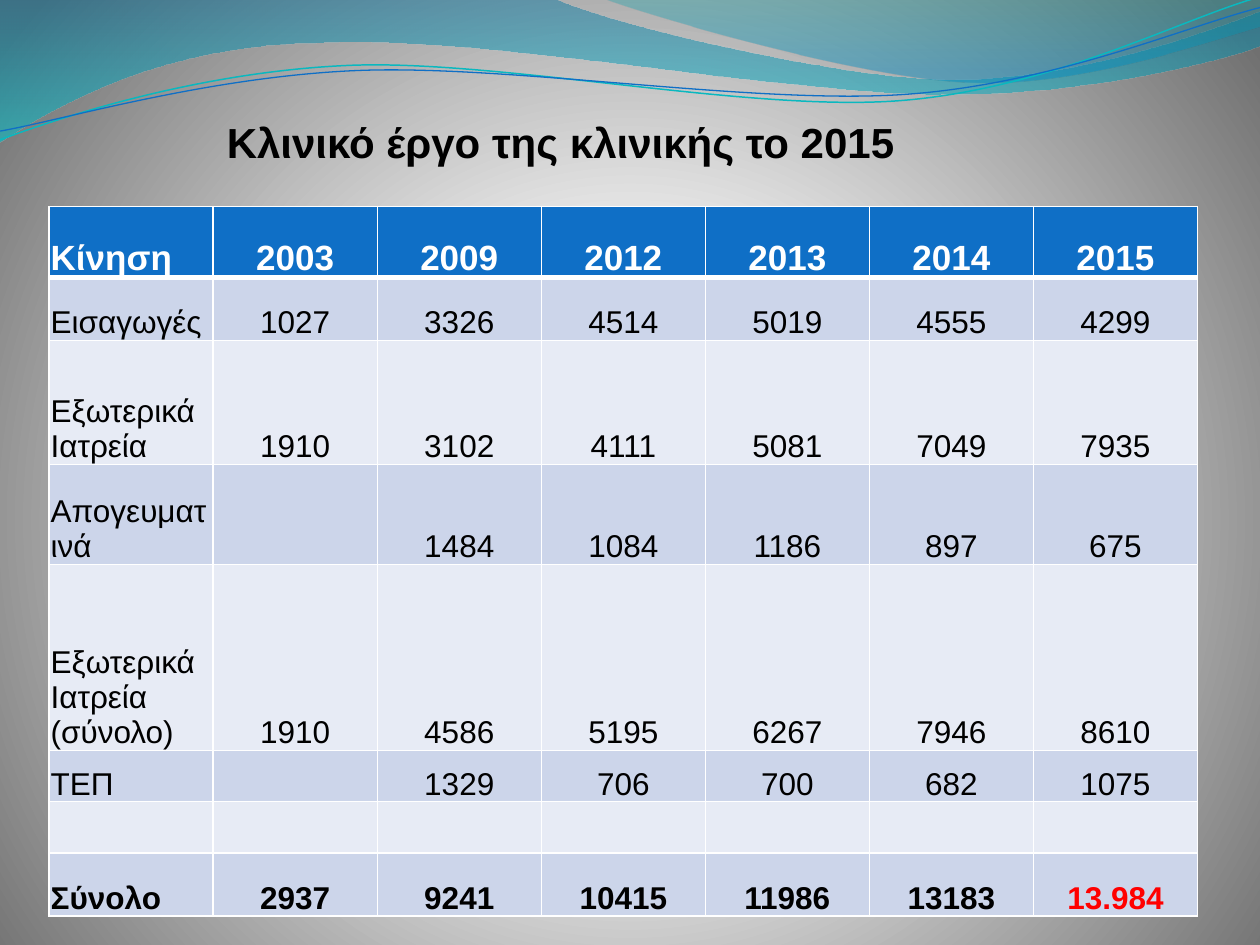
from pptx import Presentation
from pptx.dml.color import RGBColor
from pptx.enum.text import MSO_ANCHOR, MSO_AUTO_SIZE, PP_ALIGN
from pptx.oxml import parse_xml
from pptx.oxml.ns import nsdecls, qn
from pptx.util import Pt

COLORS = {
    "black": "000000", "white": "FFFFFF", "red": "FF0000", "gray": "707070",
    "header": "0F6FC6", "band_dark": "CCD5EA", "band_light": "E7EBF5",
    "ocean": "0074A1", "aqua": "00C6CF", "teal": "00A1A9", "azure": "008BBF",
    "line_teal": "0AB8BF", "line_blue": "0F6FC6",
}
FONT = "Arial"
DOWNWARD = '<a:lin ang="5400000" scaled="0"/>'
RADIAL = ('<a:path path="circle"><a:fillToRect l="10000" t="110000" '
          'r="10000" b="100000"/></a:path>')
BACKDROP_STOPS = [(0, "white", 100), (25, "white", 100), (100, "gray", 100)]

# A pair is a straight step; six numbers are a Bézier step (two controls, end).
BANDS = [
    ([(0, -0.7), (316.8, -0.7), (342.7, 12.2, 478.1, 45.4, 545.8, 45.4),
      (614.2, 45.4, 689.8, 18.7, 720, 6.5), (720.7, 25.9),
      (707.8, 31.7, 626.4, 54.7, 537.1, 54), (447.8, 54, 275, 20.2, 185, 24.5),
      (92.9, 25.2, 33.1, 59.8, -0.7, 81.4)],
     [(0, "ocean", 45), (100, "aqua", 55)]),
    ([(344.9, -0.7), (366.5, 7.9, 491, 44.6, 553.7, 46.8),
      (616.3, 49.7, 691.9, 23, 720, 15.1), (720, 0)],
     [(0, "teal", 30), (80, "azure", 45)]),
]
STRANDS = [
    ([(0, 79.9), (34.6, 67, 113.8, 41, 199.4, 37.4),
      (284.4, 33.8, 427, 64.1, 513.4, 57.6),
      (599.8, 51.1, 675.4, 10.8, 718.6, -1.4)], "line_teal", 0.85),
    ([(0, 74.9), (33.8, 69.1, 118.1, 43.9, 203.8, 40.3),
      (290.2, 36.7, 429.8, 59.8, 516.2, 54),
      (601.9, 48.2, 677.5, 15.1, 720, 4.3)], "line_blue", 0.75),
]

TITLE = "Κλινικό έργο της κλινικής το 2015"
ROWS = [
    ["Κίνηση", "2003", "2009", "2012", "2013", "2014", "2015"],
    ["Εισαγωγές", "1027", "3326", "4514", "5019", "4555", "4299"],
    ["Εξωτερικά Ιατρεία", "1910", "3102", "4111", "5081", "7049", "7935"],
    ["Απογευματινά", "", "1484", "1084", "1186", "897", "675"],
    ["Εξωτερικά Ιατρεία (σύνολο)", "1910", "4586", "5195", "6267", "7946", "8610"],
    ["ΤΕΠ", "", "1329", "706", "700", "682", "1075"],
    [""] * 7,
    ["Σύνολο", "2937", "9241", "10415", "11986", "13183", "13.984"],
]
ROW_HEIGHTS = [40.5, 36, 71, 57, 106.5, 28.8, 28.8, 36]
COLUMN_WIDTH = 93.75
HEADER_BORDERS = {"lnL": 1, "lnR": 1, "lnT": 1, "lnB": 3}
CELL_FORMAT = {
    "vertical_anchor": MSO_ANCHOR.BOTTOM, "margin_left": Pt(0.9),
    "margin_right": Pt(0.9), "margin_top": Pt(0.9), "margin_bottom": 0,
}
TITLE_PLACE = {"left": Pt(129.6), "top": Pt(11.2), "width": Pt(554.4), "height": Pt(84.2)}
TITLE_FORMAT = {
    "auto_size": MSO_AUTO_SIZE.NONE, "word_wrap": True,
    "vertical_anchor": MSO_ANCHOR.BOTTOM, "margin_left": 0,
    "margin_right": 0, "margin_top": Pt(3.6), "margin_bottom": 0,
}


def rgb(color):
    return RGBColor.from_string(COLORS[color])


def apply(target, values):
    for attribute, value in values.items():
        setattr(target, attribute, value)


def write(paragraph, text, size, color, bold, align):
    paragraph.alignment = align
    run = paragraph.add_run()
    run.text = text
    apply(run.font, {"name": FONT, "size": Pt(size), "bold": bold})
    run.font.color.rgb = rgb(color)


def set_gradient(properties, stops, direction):
    """Replace the solid fill in properties; a stop is (percent, color, opacity)."""
    stop_xml = "".join(
        f'<a:gs pos="{position * 1000}"><a:srgbClr val="{COLORS[color]}">'
        f'<a:alpha val="{opacity * 1000}"/></a:srgbClr></a:gs>'
        for position, color, opacity in stops)
    gradient = parse_xml(f'<a:gradFill {nsdecls("a")} rotWithShape="1">'
                         f'<a:gsLst>{stop_xml}</a:gsLst>{direction}</a:gradFill>')
    properties.replace(properties.find(qn("a:solidFill")), gradient)


def bend(outline, steps):
    """Join the three straight segments of each Bézier step into one curve."""
    track = outline._element.find(".//" + qn("a:path"))
    segments = iter(track.findall(qn("a:lnTo")))
    for step in steps[1:]:
        first = next(segments)
        if len(step) == 2:
            continue
        curve = parse_xml(f'<a:cubicBezTo {nsdecls("a")}/>')
        track.replace(first, curve)
        curve.append(first[0])
        for _ in range(2):
            segment = next(segments)
            curve.append(segment[0])
            track.remove(segment)


def add_outline(slide, steps, close):
    points = [(Pt(step[i]), Pt(step[i + 1]))
              for step in steps for i in range(0, len(step), 2)]
    builder = slide.shapes.build_freeform(*points[0])
    builder.add_line_segments(points[1:], close=close)
    outline = builder.convert_to_shape()
    outline.shadow.inherit = False
    bend(outline, steps)
    return outline


def add_band(slide, steps, stops):
    band = add_outline(slide, steps, close=True)
    band.line.fill.background()
    band.fill.solid()
    set_gradient(band._element.spPr, stops, DOWNWARD)


def add_strand(slide, steps, color, width):
    strand = add_outline(slide, steps, close=False)
    strand.fill.background()
    strand.line.color.rgb = rgb(color)
    strand.line.width = Pt(width)


def paint_background(slide):
    slide.background.fill.solid()
    set_gradient(slide._element.find(".//" + qn("p:bgPr")), BACKDROP_STOPS, RADIAL)


def place_title(slide):
    title = slide.shapes.title
    apply(title, TITLE_PLACE)
    apply(title.text_frame, TITLE_FORMAT)
    write(title.text_frame.paragraphs[0], TITLE, 24, "black", True, PP_ALIGN.LEFT)
    slide.shapes._spTree.append(title._element)  # in front of the waves


def add_header_borders(cell):
    properties = cell._tc.get_or_add_tcPr()
    for index, (side, width) in enumerate(HEADER_BORDERS.items()):
        properties.insert(index, parse_xml(
            f'<a:{side} {nsdecls("a")} w="{Pt(width)}"><a:solidFill>'
            f'<a:srgbClr val="{COLORS["white"]}"/></a:solidFill></a:{side}>'))


def fill_cell(cell, text, row, column):
    header, total = row == 0, row == len(ROWS) - 1
    cell.fill.solid()
    band = "band_dark" if row % 2 else "band_light"
    cell.fill.fore_color.rgb = rgb("header" if header else band)
    if header:
        add_header_borders(cell)
    if not text:
        return
    apply(cell, CELL_FORMAT)
    latest_total = total and column == len(ROWS[0]) - 1
    color = "white" if header else "red" if latest_total else "black"
    write(cell.text_frame.paragraphs[0], text, 20 if header else 18, color,
          header or total, PP_ALIGN.CENTER if column else PP_ALIGN.LEFT)


def add_activity_table(slide):
    columns = len(ROWS[0])
    table = slide.shapes.add_table(
        len(ROWS), columns, Pt(28.1), Pt(118),
        Pt(COLUMN_WIDTH * columns), Pt(sum(ROW_HEIGHTS))).table
    for column in table.columns:
        column.width = Pt(COLUMN_WIDTH)
    for row, (height, texts) in enumerate(zip(ROW_HEIGHTS, ROWS)):
        table.rows[row].height = Pt(height)
        for column, text in enumerate(texts):
            fill_cell(table.cell(row, column), text, row, column)


def main():
    deck = Presentation()
    deck.slide_width, deck.slide_height = Pt(720), Pt(540)
    slide = deck.slides.add_slide(deck.slide_layouts[5])
    paint_background(slide)
    for band in BANDS:
        add_band(slide, *band)
    for strand in STRANDS:
        add_strand(slide, *strand)
    place_title(slide)
    add_activity_table(slide)
    deck.save("out.pptx")


if __name__ == "__main__":
    main()
